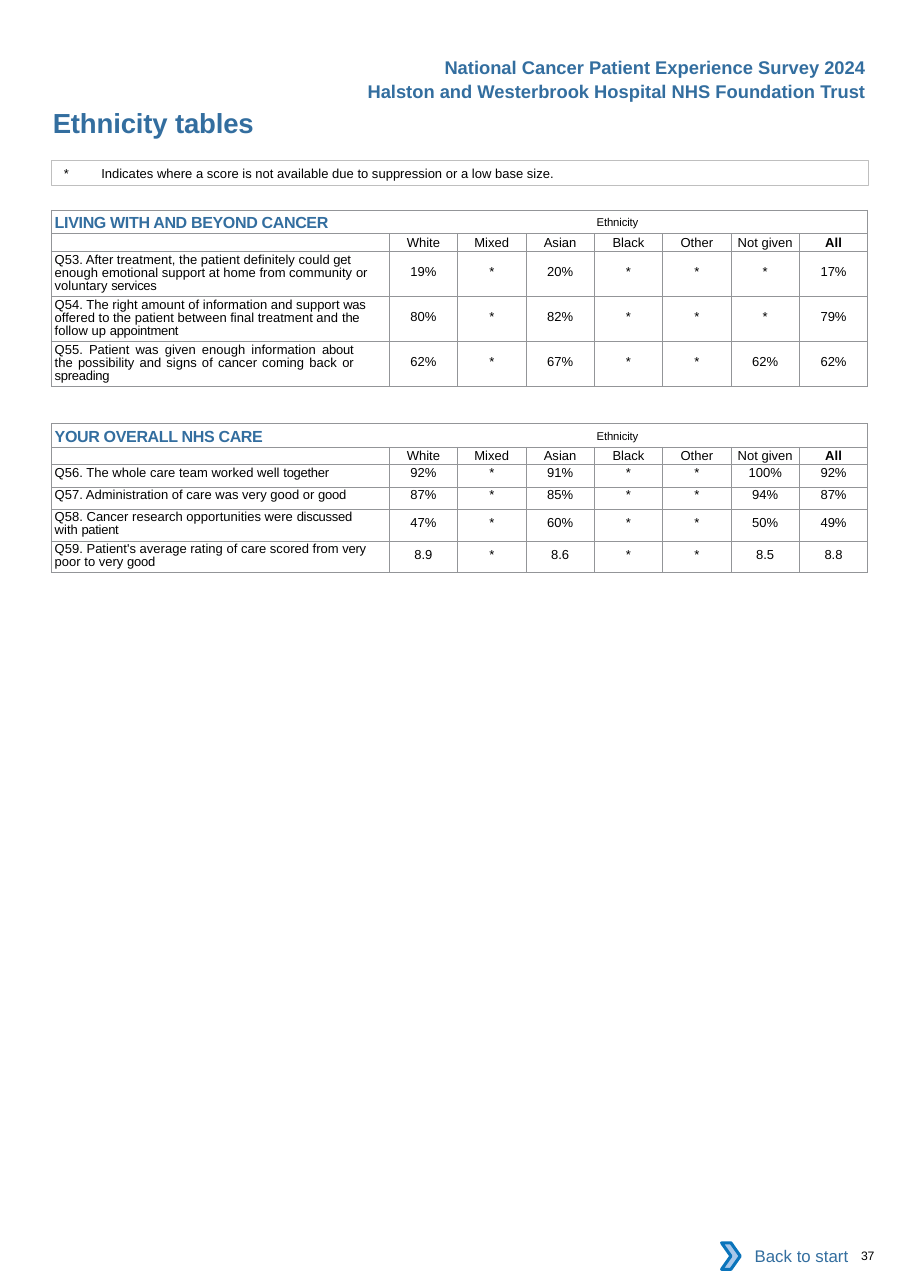
from lxml.etree import SubElement
from pptx import Presentation
from pptx.dml.color import RGBColor
from pptx.enum.shapes import MSO_SHAPE as Preset
from pptx.enum.text import MSO_ANCHOR as Anchor, MSO_AUTO_SIZE as AutoSize, PP_ALIGN as Align
from pptx.oxml.ns import qn
from pptx.util import Pt

BLUE = RGBColor(0x33, 0x6E, 0x9F)
BLACK = RGBColor(0, 0, 0)
WHITE = RGBColor(0xFF, 0xFF, 0xFF)
RULE = RGBColor(0x93, 0x95, 0x98)
FRAME = RGBColor(0xBF, 0xBF, 0xBF)
CHEVRON_FILL = RGBColor(0xA8, 0xC7, 0xE9)
CHEVRON_LINE = RGBColor(0x0A, 0x74, 0xBB)

LEFT, WIDTH = 33.8, 533.5
SCORE_WIDTH = 44.7
HEADINGS = ("White", "Mixed", "Asian", "Black", "Other", "Not given", "All")
ROW_HEIGHT = {1: 14.4, 2: 20.9, 3: 29.5}
SCORE_INSET = {1: 0.8, 2: 4.3, 3: 8.6}
QUESTION_INSET = {1: 0.8, 2: 1.6, 3: 1.6}

LIVING = (
    (3, ("Q53. After treatment, the patient definitely could", " get ",
         "enough emotional support at home from community ", "or ", "voluntary ", "services"),
     "19% * 20% * * * 17%"),
    (3, ("Q54. The right amount of information and support", " was ",
         "offered to the patient between final treatment and ", "the ", "follow up ", "appointment"),
     "80% * 82% * * * 79%"),
    (3, ("Q55. Patient was given enough information ", "about ",
         "the possibility and signs of cancer coming back ", "or spreading"),
     "62% * 67% * * 62% 62%"),
)
OVERALL = (
    (1, ("Q56. The whole care team worked well ", "together"), "92% * 91% * * 100% 92%"),
    (1, ("Q57. Administration of care was very good or", " good"), "87% * 85% * * 94% 87%"),
    (2, ("Q58. Cancer research opportunities were ", "discussed ", "with ", "patient"),
     "47% * 60% * * 50% 49%"),
    (2, ("Q59. Patient's average rating of care scored from", " very ", "poor to very ", "good"),
     "8.9 * 8.6 * * 8.5 8.8"),
)
JUSTIFIED = "Q55."


class ReportPage:
    font = "Arial"

    def __init__(self, deck):
        self.page = deck.slides.add_slide(deck.slide_layouts[5])

    def add_span(self, para, text, size, color=BLACK, bold=False, spacing=0, baseline=0):
        span = para.add_run()
        span.text = text
        span.font.name = self.font
        span.font.size = Pt(size)
        span.font.bold = bold
        span.font.color.rgb = color
        properties = span._r.get_or_add_rPr()
        if spacing:
            properties.set("spc", str(round(spacing * 100)))
        if baseline:
            properties.set("baseline", str(baseline * 1000))

    def set_tab(self, para, position):
        tabs = SubElement(para._p.get_or_add_pPr(), qn("a:tabLst"))
        SubElement(tabs, qn("a:tab"), pos=str(Pt(position)), algn="l")

    def set_insets(self, target, left=0, top=0, right=0, bottom=0):
        target.margin_left, target.margin_top = Pt(left), Pt(top)
        target.margin_right, target.margin_bottom = Pt(right), Pt(bottom)

    def title(self, text, left, top, width, height):
        box = self.page.shapes.title
        box.left, box.top, box.width, box.height = Pt(left), Pt(top), Pt(width), Pt(height)
        frame = box.text_frame
        frame.auto_size = AutoSize.NONE
        frame.vertical_anchor = Anchor.TOP
        self.set_insets(frame, left=0.7)
        para = frame.paragraphs[0]
        para.alignment = Align.LEFT
        self.add_span(para, text, 18, BLUE, True, -0.1)

    def text_box(self, left, top, width, height):
        box = self.page.shapes.add_textbox(Pt(left), Pt(top), Pt(width), Pt(height))
        return box.text_frame

    def banner(self, spans, left, top, width):
        frame = self.text_box(left, top, width, 21.6)
        frame.word_wrap = False
        para = frame.paragraphs[0]
        para.alignment = Align.RIGHT
        for text in spans:
            self.add_span(para, text, 12, BLUE, True)

    def page_number(self, text, left, top):
        frame = self.text_box(left, top, 36, 9.4)
        frame.word_wrap = True
        self.set_insets(frame, left=7.2)
        self.add_span(frame.paragraphs[0], text, 8, spacing=-0.2)

    def shape(self, preset, left, top, width, height, fill=None, line=None, weight=0.5):
        shape = self.page.shapes.add_shape(preset, Pt(left), Pt(top), Pt(width), Pt(height))
        shape.shadow.inherit = False
        if fill is None:
            shape.fill.background()
        else:
            shape.fill.solid()
            shape.fill.fore_color.rgb = fill
        if line is None:
            shape.line.fill.background()
        else:
            shape.line.color.rgb = line
            shape.line.width = Pt(weight)
        return shape

    def note(self, symbol, text, top):
        frame = self.shape(Preset.RECTANGLE, LEFT, top, WIDTH, 16.2, line=FRAME).text_frame
        frame.word_wrap = True
        frame.vertical_anchor = Anchor.TOP
        self.set_insets(frame, left=7.9, top=2.9, bottom=2.9)
        para = frame.paragraphs[0]
        para.alignment = Align.LEFT
        self.set_tab(para, 24.5)
        self.add_span(para, symbol, 8.5)
        self.add_span(para, "\t" + text, 8.5)

    def back_button(self, text, left, top):
        button = self.shape(Preset.RECTANGLE, left + 5, top, 85, 30.2, WHITE)
        frame = button.text_frame
        frame.vertical_anchor = Anchor.MIDDLE
        para = frame.paragraphs[0]
        para.alignment = Align.RIGHT
        self.add_span(para, text, 11, BLUE)
        self.shape(Preset.CHEVRON, left, top + 6.5, 12.2, 17.3, CHEVRON_FILL, CHEVRON_LINE, 2)

    def rule_cell(self, cell):
        properties = cell._tc.get_or_add_tcPr()
        for side in "LRTB":
            line = SubElement(properties, qn("a:ln" + side), w=str(Pt(0.5)))
            fill = SubElement(line, qn("a:solidFill"))
            SubElement(fill, qn("a:srgbClr"), val=str(RULE))
        cell.fill.background()
        self.set_insets(cell)

    def score_table(self, heading, questions, top):
        heights = [15.1, 11.5] + [ROW_HEIGHT[lines] for lines, _, _ in questions]
        table = self.page.shapes.add_table(
            len(heights), len(HEADINGS) + 1, Pt(LEFT), Pt(top), Pt(WIDTH), Pt(sum(heights))).table
        table.first_row = table.horz_banding = False
        for row, height in zip(table.rows, heights):
            row.height = Pt(height)
        for column in table.columns:
            column.width = Pt(SCORE_WIDTH)
        table.columns[0].width = Pt(WIDTH - SCORE_WIDTH * len(HEADINGS))
        for cell in table.iter_cells():
            self.rule_cell(cell)
            end = SubElement(cell.text_frame.paragraphs[0]._p, qn("a:endParaRPr"))
            end.set("sz", "850")

        table.cell(0, 0).merge(table.cell(0, len(HEADINGS)))
        self.heading_cell(table.cell(0, 0), heading)
        for column, name in enumerate(HEADINGS, 1):
            cell = table.cell(1, column)
            cell.vertical_anchor = Anchor.MIDDLE
            para = self.score_cell(cell, name, 0, name == "All")
            para.line_spacing = Pt(9.9)
        for row, (lines, spans, scores) in enumerate(questions, 2):
            self.question_cell(table.cell(row, 0), spans, lines)
            for column, score in enumerate(scores.split(), 1):
                self.score_cell(table.cell(row, column), score, SCORE_INSET[lines])

    def heading_cell(self, cell, heading):
        cell.vertical_anchor = Anchor.MIDDLE
        self.set_insets(cell, left=2)
        para = cell.text_frame.paragraphs[0]
        self.set_tab(para, 354.2)
        self.add_span(para, heading + "\t", 10.5, BLUE, True, -0.2)
        self.add_span(para, "Ethnicity", 12.8, spacing=-0.1, baseline=10)

    def question_cell(self, cell, spans, lines):
        justified = spans[0].startswith(JUSTIFIED)
        self.set_insets(cell, left=2, top=QUESTION_INSET[lines], right=23.5 if justified else 12)
        para = cell.text_frame.paragraphs[0]
        para.alignment = Align.JUSTIFY if justified else Align.LEFT
        if lines > 1:
            para.line_spacing = Pt(8.6)
        for index, text in enumerate(spans):
            self.add_span(para, text, 8.5, spacing=-0.2 * (index % 2))

    def score_cell(self, cell, text, inset, bold=False):
        cell.margin_top = Pt(inset)
        para = cell.text_frame.paragraphs[0]
        para.alignment = Align.CENTER
        self.add_span(para, text, 8.5, bold=bold)
        return para


def main():
    deck = Presentation()
    deck.slide_width, deck.slide_height = Pt(594.72), Pt(841.68)
    report = ReportPage(deck)
    report.page_number("37", 555.8, 815.8)
    report.title("Ethnicity tables", LEFT, 69.1, 324, 21.6)
    report.score_table("LIVING WITH AND BEYOND CANCER", LIVING, 137.4)
    report.score_table("YOUR OVERALL NHS CARE", OVERALL, 276.9)
    report.note("*", "Indicates where a score is not available due to suppression or a low base size.", 105)
    report.banner(["Halston and Westerbrook Hospital NHS Foundation Trust"], 227.5, 49, 345.6)
    report.banner(["National Cancer Patient Experience Survey ", "2024"], 282.2, 33, 290.9)
    report.back_button("Back to start", 471.6, 805.7)
    deck.save("out.pptx")


if __name__ == "__main__":
    main()
